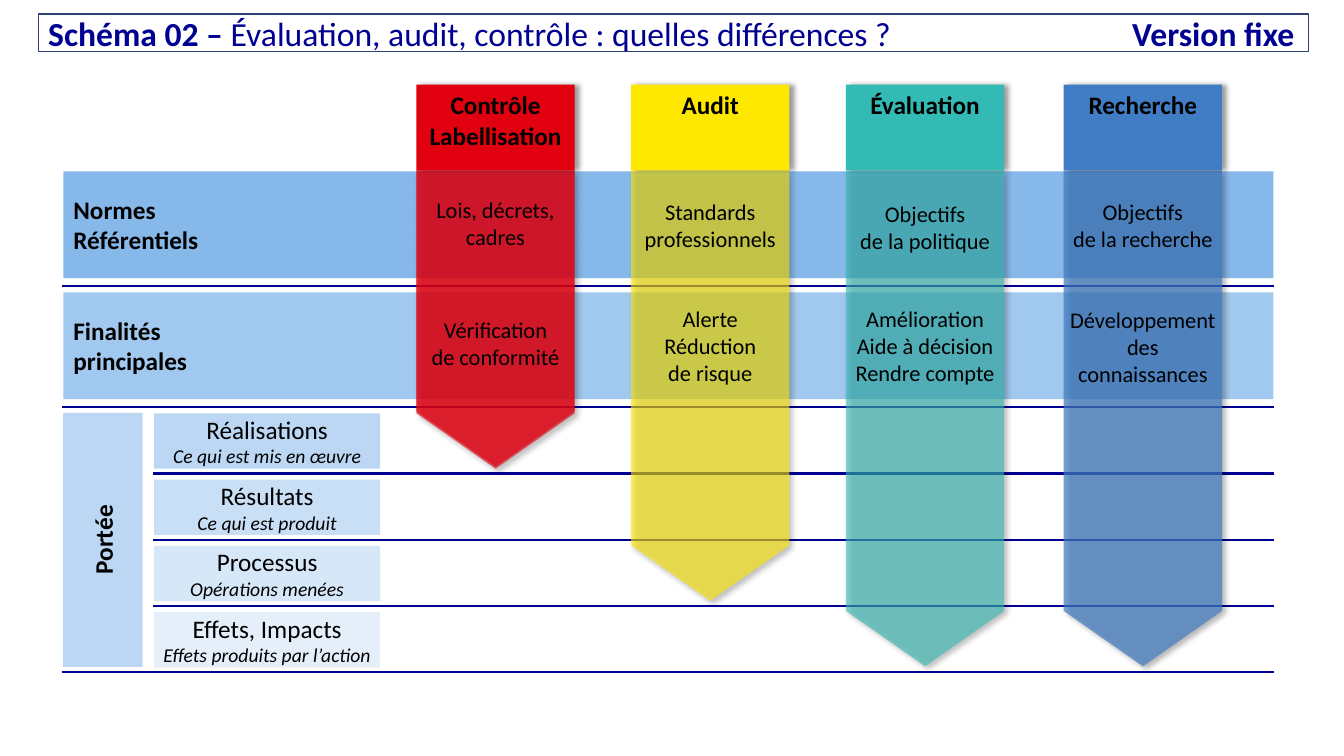
import pptx
import pptx.dml.color
import pptx.enum.shapes
import pptx.enum.text
import pptx.oxml
import pptx.oxml.ns
import pptx.util
from lxml import etree

Inches = pptx.util.Inches
Pt = pptx.util.Pt
RGBColor = pptx.dml.color.RGBColor
Shape = pptx.enum.shapes.MSO_SHAPE
Anchor = pptx.enum.text.MSO_ANCHOR
Align = pptx.enum.text.PP_ALIGN
qn = pptx.oxml.ns.qn

BLACK = RGBColor(0x00, 0x00, 0x00)
NAVY = RGBColor(0x00, 0x00, 0x91)
FRAME = RGBColor(0x2F, 0x40, 0x77)
SKY = RGBColor(0x7A, 0xB1, 0xE8)
RED = RGBColor(0xE1, 0x00, 0x0F)
YELLOW = RGBColor(0xFF, 0xE8, 0x00)
TEAL = RGBColor(0x34, 0xBA, 0xB5)
BLUE = RGBColor(0x41, 0x7D, 0xC4)

LEFT, RIGHT = 0.62, 12.64
SCOPE_LEFT = 1.52
SCOPE_TOP, SCOPE_BOTTOM = 4.04, 6.67
HEADER_TOP, ARROW_TOP = 0.84, 1.69
COLUMN_WIDTH = 1.57

CRITERIA = [
    (1.7, 90, ["Normes", "Référentiels"]),
    (2.9, 70, ["Finalités", "principales"]),
]
SCOPES = [
    ("Réalisations", "Ce qui est mis en œuvre"),
    ("Résultats", "Ce qui est produit"),
    ("Processus", "Opérations menées"),
    ("Effets, Impacts", "Effets produits par l’action"),
]
COLUMNS = [
    (4.13, RED, 60, 2.96, ["Contrôle", "Labellisation"],
     (1.69, ["Lois, décrets,", "cadres"]),
     (2.88, ["Vérification", "de conformité"])),
    (6.26, YELLOW, 60, 4.27, ["Audit"],
     (1.71, ["Standards professionnels"]),
     (2.9, ["Alerte", "Réduction", "de risque"])),
    (8.39, TEAL, 60, 4.92, ["Évaluation"],
     (1.73, ["Objectifs", "de la politique"]),
     (2.9, ["Amélioration", "Aide à décision", "Rendre compte"])),
    (10.55, BLUE, 70, 4.92, ["Recherche"],
     (1.71, ["Objectifs", "de la recherche"]),
     (2.91, ["Développement des", "connaissances"])),
]


class Diagram:
    font = "Calibri"

    def __init__(self, slide):
        self.slide = slide

    def style(self, run, size, color=BLACK, bold=False, italic=False):
        run.font.name = self.font
        run.font.size = Pt(size)
        run.font.color.rgb = color
        run.font.bold = bold
        run.font.italic = italic

    def set_lines(self, shape, lines, size=18, align=Align.CENTER, anchor=Anchor.MIDDLE,
                  bold=False, margin=None):
        frame = shape.text_frame
        frame.word_wrap = True
        frame.vertical_anchor = anchor
        if margin is not None:
            frame.margin_left = frame.margin_right = Inches(margin)
            frame.margin_top = frame.margin_bottom = Inches(margin)
        frame.text = "\n".join(lines)
        for paragraph in frame.paragraphs:
            paragraph.alignment = align
            for run in paragraph.runs:
                self.style(run, size, bold=bold)

    def block(self, left, top, width, height, color=None, opacity=100,
              kind=Shape.RECTANGLE, rotation=0, shadow_angle=None):
        shape = self.slide.shapes.add_shape(
            kind, Inches(left), Inches(top), Inches(width), Inches(height))
        shape.rotation = rotation
        shape.shadow.inherit = False
        shape.line.fill.background()
        if color is None:
            shape.fill.background()
        else:
            shape.fill.solid()
            shape.fill.fore_color.rgb = color
        properties = shape.element.spPr
        if opacity < 100:
            fill_color = properties.find(qn("a:solidFill")).find(qn("a:srgbClr"))
            etree.SubElement(fill_color, qn("a:alpha"), val=str(opacity * 1000))
        if shadow_angle is not None:
            shadow = etree.SubElement(
                properties.find(qn("a:effectLst")), qn("a:outerShdw"),
                blurRad=str(Pt(4)), dist=str(Pt(3)), dir=str(shadow_angle * 60000),
                algn="tl", rotWithShape="0")
            shade = etree.SubElement(shadow, qn("a:srgbClr"), val="000000")
            etree.SubElement(shade, qn("a:alpha"), val="40000")
        return shape

    def arrow(self, left, length, color, opacity, shadow_angle=None):
        shape = self.block(
            left + (COLUMN_WIDTH - length) / 2, ARROW_TOP + (length - COLUMN_WIDTH) / 2,
            length, COLUMN_WIDTH, color, opacity, Shape.PENTAGON, 90, shadow_angle)
        shape.adjustments[0] = 0.35

    def label(self, left, top, lines):
        box = self.slide.shapes.add_textbox(
            Inches(left), Inches(top), Inches(COLUMN_WIDTH), Inches(1.05))
        self.set_lines(box, lines, size=16, margin=0.04)

    def rule(self, left, y):
        line = self.slide.shapes.add_connector(
            pptx.enum.shapes.MSO_CONNECTOR.STRAIGHT,
            Inches(left), Inches(y), Inches(RIGHT), Inches(y))
        line.line.color.rgb = NAVY
        line.line.width = Pt(1.5)
        etree.SubElement(line.element.spPr, qn("a:effectLst"))

    def column(self, left, color, opacity, length, heading, *labels):
        self.arrow(left, length, color, opacity, 45)
        if color == RED:
            self.arrow(left, length - 0.02, color, opacity)
        for top, lines in labels:
            self.label(left, top, lines)
        header = self.block(left, HEADER_TOP, COLUMN_WIDTH, ARROW_TOP - HEADER_TOP,
                            color, shadow_angle=0)
        self.set_lines(header, heading, anchor=Anchor.TOP, bold=True)

    def title(self, parts):
        box = self.block(0.38, 0.14, 12.6, 0.37)
        box.line.color.rgb = FRAME
        box.line.width = Pt(1)
        box.text_frame.word_wrap = True
        box.text_frame.vertical_anchor = Anchor.MIDDLE
        paragraph = box.text_frame.paragraphs[0]
        paragraph.alignment = Align.LEFT
        tabs = etree.SubElement(box.element.find(".//" + qn("a:pPr")), qn("a:tabLst"))
        etree.SubElement(tabs, qn("a:tab"), pos=str(Inches(12.36)), algn="r")
        for text, bold in parts:
            run = paragraph.add_run()
            run.text = text
            self.style(run, 24, NAVY, bold)


def main():
    presentation = pptx.Presentation()
    presentation.slide_width = Inches(13.33)
    presentation.slide_height = Inches(7.5)
    diagram = Diagram(presentation.slides.add_slide(presentation.slide_layouts[6]))

    for top, opacity, lines in CRITERIA:
        band = diagram.block(0.63, top, 12, 1.06, SKY, opacity)
        diagram.set_lines(band, lines, align=Align.LEFT, bold=True)

    step = (SCOPE_BOTTOM - SCOPE_TOP) / len(SCOPES)
    for index, lines in enumerate(SCOPES):
        box = diagram.block(1.53, SCOPE_TOP + 0.06 + index * step, 2.24, 0.55,
                            SKY, 50 - 10 * index)
        diagram.set_lines(box, lines)
        box.text_frame.margin_left = box.text_frame.margin_right = Inches(0.08)
        diagram.style(box.text_frame.paragraphs[1].runs[0], 14, italic=True)

    scope = diagram.block(-0.24, 4.96, 2.52, 0.79, SKY, 50, rotation=270)
    diagram.set_lines(scope, ["Portée"], bold=True)

    for y in (2.84, SCOPE_TOP, SCOPE_BOTTOM):
        diagram.rule(LEFT, y)
    for index in range(1, len(SCOPES)):
        diagram.rule(SCOPE_LEFT, SCOPE_TOP + index * step)

    for column in COLUMNS:
        diagram.column(*column)

    diagram.title([
        ("Schéma 02 – ", True),
        ("Évaluation, audit, contrôle : quelles différences ?\t", False),
        ("Version fixe", True),
    ])
    presentation.save("out.pptx")


if __name__ == "__main__":
    main()
